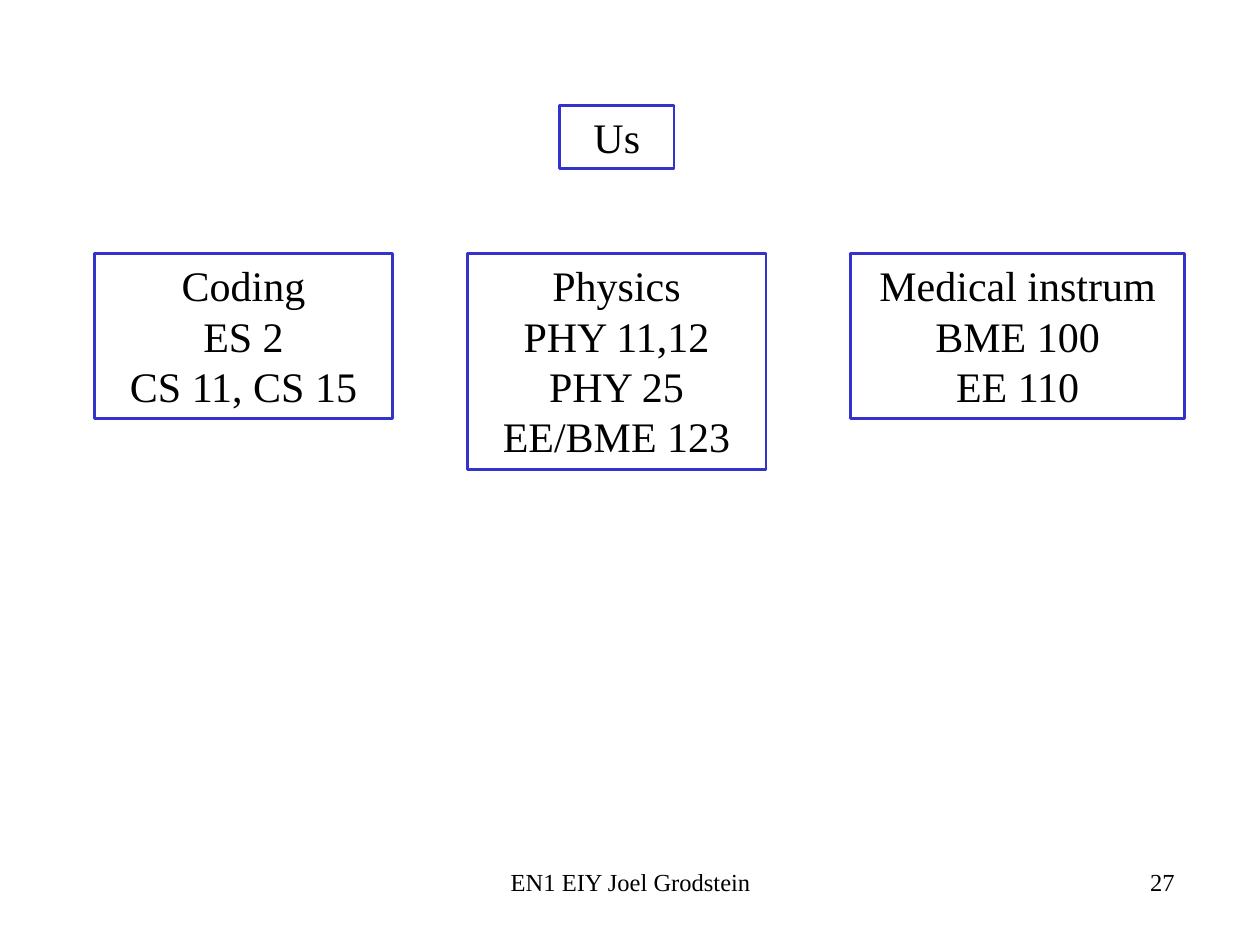
from pptx import Presentation
from pptx.dml.color import RGBColor
from pptx.enum.shapes import MSO_SHAPE as Shape
from pptx.enum.text import MSO_ANCHOR as Anchor, MSO_AUTO_SIZE as AutoSize, PP_ALIGN as Align
from pptx.util import Cm, Pt

BLACK = RGBColor(0x00, 0x00, 0x00)
BLUE = RGBColor(0x33, 0x33, 0xCC)


class CourseMap:
    font = "Times New Roman"
    topic_size = Pt(24)
    footer_size = Pt(14)
    line_height = 1.03
    padding = 0.24

    def __init__(self, slide):
        self.slide = slide

    def set_lines(self, frame, lines, size, align):
        frame.word_wrap = True
        frame.vertical_anchor = Anchor.TOP
        frame.text = "\n".join(lines)
        for paragraph in frame.paragraphs:
            paragraph.alignment = align
            for run in paragraph.runs:
                run.font.name = self.font
                run.font.size = size
                run.font.color.rgb = BLACK

    def topic(self, left, top, width, *lines):
        """Outlined box whose height follows its number of lines."""
        height = self.padding + self.line_height * len(lines)
        box = self.slide.shapes.add_shape(
            Shape.RECTANGLE, Cm(left), Cm(top), Cm(width), Cm(height))
        box.shadow.inherit = False
        box.fill.background()
        box.line.color.rgb = BLUE
        box.line.width = Pt(1.5)
        self.set_lines(box.text_frame, lines, self.topic_size, Align.CENTER)
        box.text_frame.auto_size = AutoSize.SHAPE_TO_FIT_TEXT

    def footer(self, left, text, align):
        label = self.slide.shapes.add_textbox(Cm(left), Cm(17.35), Cm(8.05), Cm(1.27))
        self.set_lines(label.text_frame, [text], self.footer_size, align)


def main():
    deck = Presentation()
    deck.slide_width, deck.slide_height = Cm(25.4), Cm(19.05)
    course_map = CourseMap(deck.slides.add_slide(deck.slide_layouts[6]))

    course_map.footer(15.88, "27", Align.RIGHT)
    course_map.footer(8.69, "EN1 EIY Joel Grodstein", Align.CENTER)

    course_map.topic(11.28, 2.13, 2.31, "Us")
    row_top = 5.11
    course_map.topic(1.9, row_top, 6.02, "Coding", "ES 2", "CS 11, CS 15")
    course_map.topic(9.42, row_top, 6.02, "Physics", "PHY 11,12", "PHY 25", "EE/BME 123")
    course_map.topic(17.15, row_top, 6.73, "Medical instrum", "BME 100", "EE 110")

    deck.save("out.pptx")


if __name__ == "__main__":
    main()
